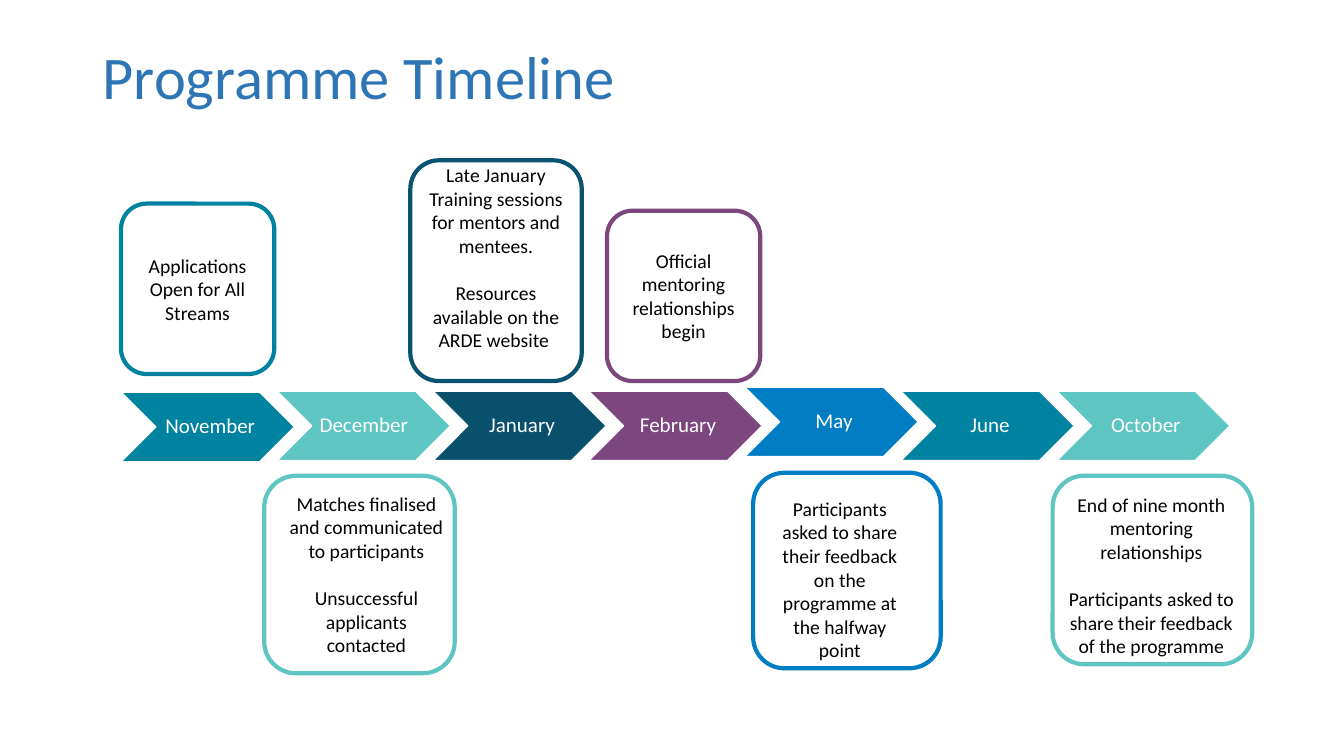
import pptx
import pptx.util
from pptx.dml.color import RGBColor
from pptx.enum.shapes import MSO_SHAPE
from pptx.enum.text import MSO_ANCHOR, PP_ALIGN
from pptx.util import Inches

TITLE_BLUE = RGBColor(0x2E, 0x75, 0xB6)
TEAL = RGBColor(0x00, 0x83, 0xA0)
AQUA = RGBColor(0x5E, 0xC5, 0xC2)
NAVY = RGBColor(0x09, 0x50, 0x6C)
NAVY_OUTLINE = RGBColor(0x09, 0x53, 0x70)
PURPLE = RGBColor(0x7C, 0x47, 0x7E)
BLUE = RGBColor(0x00, 0x7D, 0xC3)
WHITE = RGBColor(0xFF, 0xFF, 0xFF)
BLACK = RGBColor(0x00, 0x00, 0x00)

TITLE = "Programme Timeline"
TITLE_BOX = (0.92, 0.4, 11.5, 0.79)

# Month, fill, top
MONTHS = [
    ("November", TEAL, 3.89),
    ("December ", AQUA, 3.88),
    ("January", NAVY, 3.88),
    ("February", PURPLE, 3.88),
    ("May", BLUE, 3.84),
    ("June", TEAL, 3.88),
    ("October", AQUA, 3.88),
]
FIRST_LEFT, LAST_LEFT = 1.2, 10.48
CHEVRON_WIDTH, CHEVRON_HEIGHT = 1.72, 0.69

# Outline colour, frame box, text box (None: text sits centred in the frame), paragraphs
CALLOUTS = [
    (TEAL, (1.2, 2.02, 1.52, 1.69), None,
     ["Applications Open for All Streams"]),
    (AQUA, (2.62, 4.72, 1.89, 1.96), (2.72, 4.83, 1.83, 2.12),
     ["Matches finalised and communicated to participants",
      "Unsuccessful applicants contacted"]),
    (NAVY_OUTLINE, (4.07, 1.59, 1.7, 2.19), (4.07, 1.57, 1.7, 1.99),
     ["Late January Training sessions for mentors and mentees.",
      "Resources available on the ARDE website "]),
    (PURPLE, (6.02, 2.09, 1.52, 1.69), None,
     ["Official mentoring relationships begin"]),
    (BLUE, (7.47, 4.69, 1.86, 1.94), (7.62, 4.88, 1.42, 1.75),
     ["Participants asked to share their feedback on the programme "
      "at the halfway point"]),
    (AQUA, (10.44, 4.72, 1.98, 1.87), (10.5, 4.84, 1.84, 1.75),
     ["End of nine month mentoring relationships",
      "Participants asked to share their feedback of the programme"]),
]
PARAGRAPH_GAP = 17

FRAME_MIDDLE = {"word_wrap": True, "vertical_anchor": MSO_ANCHOR.MIDDLE}
FRAME_TOP = {"word_wrap": True, "vertical_anchor": MSO_ANCHOR.TOP}
FRAME_CHEVRON = {
    **FRAME_MIDDLE,
    "margin_left": Inches(0.07), "margin_right": Inches(0.02),
    "margin_top": Inches(0.02), "margin_bottom": Inches(0.02),
}
TITLE_PARAGRAPH = {"alignment": PP_ALIGN.LEFT, "line_spacing": 0.9}
MONTH_PARAGRAPH = {"alignment": PP_ALIGN.CENTER, "line_spacing": 0.9}
CALLOUT_PARAGRAPH = {"alignment": PP_ALIGN.CENTER}


def apply_format(target, values):
    for name, value in values.items():
        setattr(target, name, value)


def write_text(shape, paragraphs, size, color, frame_format, paragraph_format):
    frame = shape.text_frame
    apply_format(frame, frame_format)
    for index, text in enumerate(paragraphs):
        paragraph = frame.add_paragraph() if index else frame.paragraphs[0]
        paragraph.text = text
        apply_format(paragraph, paragraph_format)
        if index:
            paragraph.space_before = pptx.util.Pt(PARAGRAPH_GAP)
        apply_format(paragraph.font, {"name": "Calibri", "size": pptx.util.Pt(size)})
        paragraph.font.color.rgb = color


def add_text_box(slide, box):
    return slide.shapes.add_textbox(*map(Inches, box))


def add_outlined_shape(slide, kind, box, line_color, line_width, fill=None):
    shape = slide.shapes.add_shape(kind, *map(Inches, box))
    shape.shadow.inherit = False
    if fill is None:
        shape.fill.background()
    else:
        shape.fill.solid()
        shape.fill.fore_color.rgb = fill
    shape.line.color.rgb = line_color
    shape.line.width = pptx.util.Pt(line_width)
    return shape


def add_months(slide):
    pitch = (LAST_LEFT - FIRST_LEFT) / (len(MONTHS) - 1)
    for index, (month, fill, top) in enumerate(MONTHS):
        box = (FIRST_LEFT + index * pitch, top, CHEVRON_WIDTH, CHEVRON_HEIGHT)
        chevron = add_outlined_shape(slide, MSO_SHAPE.CHEVRON, box, WHITE, 1, fill)
        write_text(chevron, [month], 15, WHITE, FRAME_CHEVRON, MONTH_PARAGRAPH)


def add_callouts(slide):
    for color, box, text_box, paragraphs in CALLOUTS:
        holder = add_outlined_shape(slide, MSO_SHAPE.ROUNDED_RECTANGLE, box, color, 3)
        frame_format = FRAME_MIDDLE
        if text_box:
            holder = add_text_box(slide, text_box)
            frame_format = FRAME_TOP
        write_text(holder, paragraphs, 14, BLACK, frame_format, CALLOUT_PARAGRAPH)


def main():
    presentation = pptx.Presentation()
    presentation.slide_width = Inches(13.33)
    presentation.slide_height = Inches(7.5)
    slide = presentation.slides.add_slide(presentation.slide_layouts[6])
    write_text(add_text_box(slide, TITLE_BOX), [TITLE], 43.2, TITLE_BLUE,
               FRAME_MIDDLE, TITLE_PARAGRAPH)
    add_months(slide)
    add_callouts(slide)
    presentation.save("out.pptx")


if __name__ == "__main__":
    main()
